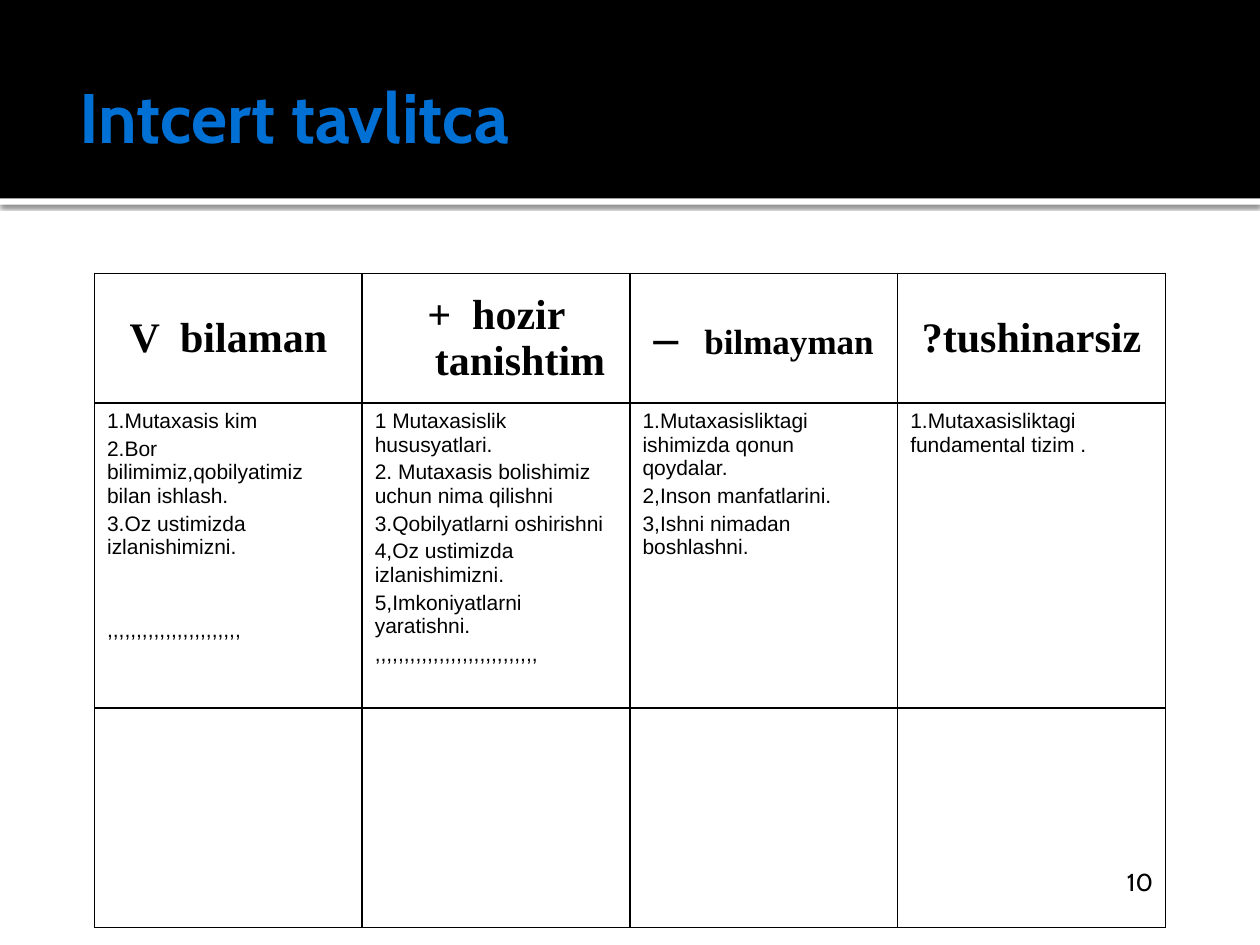
from dataclasses import dataclass

from lxml.etree import SubElement
from pptx import Presentation
from pptx.dml.color import RGBColor
from pptx.enum.shapes import MSO_SHAPE
from pptx.enum.text import MSO_ANCHOR, PP_ALIGN
from pptx.oxml.ns import qn
from pptx.util import Inches, Pt


@dataclass(frozen=True)
class Theme:
    black: RGBColor = RGBColor(0x00, 0x00, 0x00)
    white: RGBColor = RGBColor(0xFF, 0xFF, 0xFF)
    blue: RGBColor = RGBColor(0x00, 0x70, 0xD5)
    heading_font: str = "Cabin"
    header_font: str = "Times New Roman"
    body_font: str = "Arial"
    title_size: int = 40
    dash_size: int = 28
    header_size: int = 24
    small_header_size: int = 20
    number_size: int = 14
    body_size: int = 12


theme = Theme()

HEADERS = [
    [("V  bilaman", theme.header_size)],
    [("+  hozir tanishtim", theme.header_size)],
    [("–", theme.dash_size), ("   bilmayman", theme.small_header_size)],
    [("?tushinarsiz", theme.header_size)],
]
ANSWERS = [
    ["1.Mutaxasis kim",
     "2.Bor bilimimiz,qobilyatimiz bilan ishlash.",
     "3.Oz ustimizda izlanishimizni.",
     "," * 23],
    ["1 Mutaxasislik hususyatlari.",
     "2. Mutaxasis bolishimiz uchun nima qilishni",
     "3.Qobilyatlarni oshirishni",
     "4,Oz ustimizda izlanishimizni.",
     "5,Imkoniyatlarni yaratishni.",
     "," * 28],
    ["1.Mutaxasisliktagi ishimizda qonun qoydalar.",
     "2,Inson manfatlarini.",
     "3,Ishni nimadan boshlashni."],
    ["1.Mutaxasisliktagi fundamental tizim ."],
]
ROW_HEIGHTS = [1.03, 2.42, 1.74]
PARAGRAPH_GAP = Pt(2.4)
WIDE_GAP = Pt(34)


def add_run(paragraph, text, font, size, color=theme.black, bold=False):
    run = paragraph.add_run()
    run.text = text
    run.font.name = font
    run.font.size = Pt(size)
    run.font.bold = bold
    run.font.color.rgb = color


presentation = Presentation()
presentation.slide_width = Inches(10)
presentation.slide_height = Inches(7.5)
width, height = presentation.slide_width, presentation.slide_height
slide = presentation.slides.add_slide(presentation.slide_layouts[6])

# Title band with a white, shadowed edge below it
band_height = int(height * 0.21)
edge_height = Inches(0.05)
bands = []
for top, depth, color in [(band_height, edge_height, theme.white),
                          (0, band_height, theme.black)]:
    band = slide.shapes.add_shape(MSO_SHAPE.RECTANGLE, 0, top, width, depth)
    band.shadow.inherit = False
    band.fill.solid()
    band.fill.fore_color.rgb = color
    band.line.fill.background()
    bands.append(band)

effects = bands[0].element.spPr.find(qn("a:effectLst"))
shadow = SubElement(effects, qn("a:outerShdw"), blurRad=str(Pt(2.5)),
                    dist=str(Pt(0.8)), dir="5400000", rotWithShape="0")
shadow_color = SubElement(shadow, qn("a:srgbClr"), val=str(theme.black))
SubElement(shadow_color, qn("a:alpha"), val="60000")

title = slide.shapes.add_textbox(Inches(0.53), Inches(0.29), Inches(9), Inches(1.25))
title_frame = title.text_frame
title_frame.word_wrap = True
title_frame.vertical_anchor = MSO_ANCHOR.MIDDLE
title_frame.margin_right = Inches(0.05)
add_run(title_frame.paragraphs[0], "Intcert tavlitca", theme.heading_font,
        theme.title_size, theme.blue, bold=True)

# Table: headers, answers and an empty row
table_width = int(width * 0.85)
table_shape = slide.shapes.add_table(
    len(ROW_HEIGHTS), len(HEADERS), (width - table_width) // 2, Inches(2.17),
    table_width, Inches(sum(ROW_HEIGHTS)))
table = table_shape.table
table.first_row = False
table.horz_banding = False
for row, row_height in zip(table.rows, ROW_HEIGHTS):
    row.height = Inches(row_height)

for cell in table.iter_cells():
    properties = cell._tc.get_or_add_tcPr()
    for side in ("lnL", "lnR", "lnT", "lnB"):
        border = SubElement(properties, qn(f"a:{side}"), w=str(Pt(1)))
        border_fill = SubElement(border, qn("a:solidFill"))
        SubElement(border_fill, qn("a:srgbClr"), val=str(theme.black))
    cell.fill.background()

for column, (header, answers) in enumerate(zip(HEADERS, ANSWERS)):
    header_cell = table.cell(0, column)
    header_cell.vertical_anchor = MSO_ANCHOR.MIDDLE
    paragraph = header_cell.text_frame.paragraphs[0]
    paragraph.alignment = PP_ALIGN.CENTER
    indents = paragraph._p.get_or_add_pPr()
    indents.set("marL", str(Inches(0.38)))
    indents.set("indent", str(-Inches(0.38)))
    for text, size in header:
        add_run(paragraph, text, theme.header_font, size, bold=True)

    answer_frame = table.cell(1, column).text_frame
    for index, answer in enumerate(answers):
        paragraph = answer_frame.add_paragraph() if index else answer_frame.paragraphs[0]
        paragraph.space_before = PARAGRAPH_GAP
        add_run(paragraph, answer, theme.body_font, theme.body_size)

# The dotted line of the first column stands apart from its answers
table.cell(1, 0).text_frame.paragraphs[-1].space_before = WIDE_GAP

number = slide.shapes.add_textbox(Inches(7.17), Inches(6.83), Inches(2.08), Inches(0.5))
number.text_frame.word_wrap = True
paragraph = number.text_frame.paragraphs[0]
paragraph.alignment = PP_ALIGN.RIGHT
add_run(paragraph, "10", theme.heading_font, theme.number_size)

presentation.save("out.pptx")
